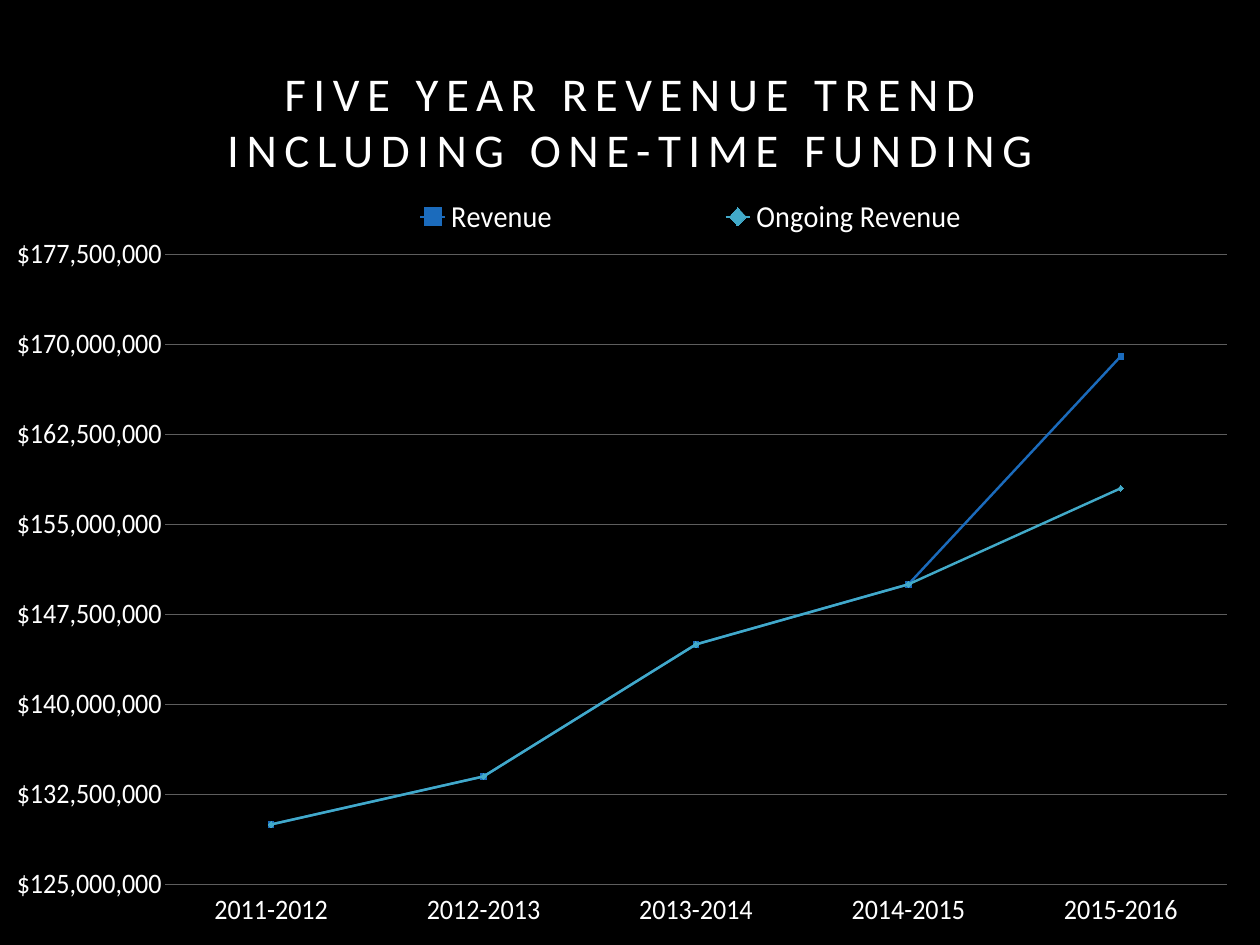
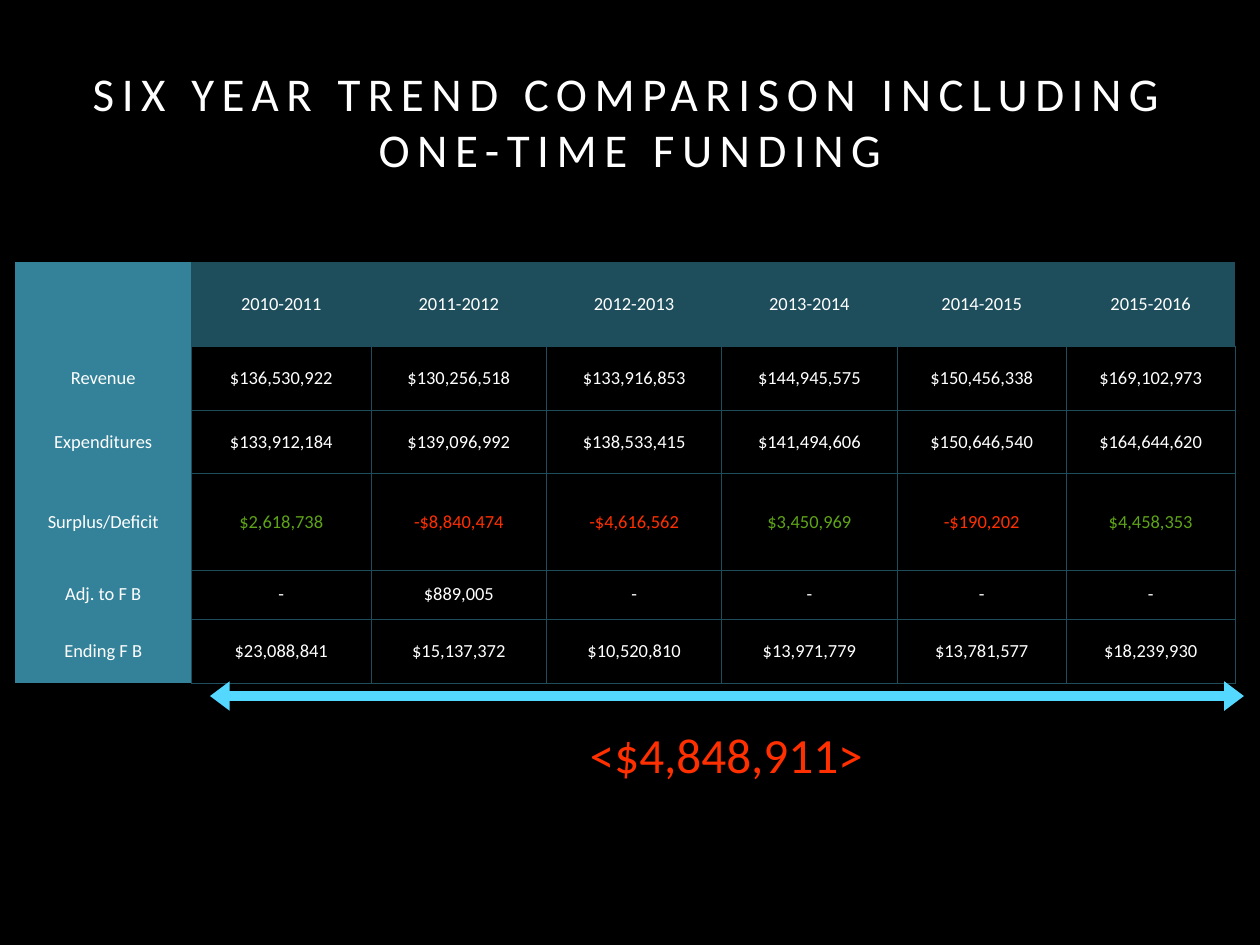
"""Build two slides on revenue trends: a line chart and a comparison table."""
from collections import namedtuple
from lxml.etree import Element, SubElement
from pptx import Presentation
from pptx.chart.data import CategoryChartData
from pptx.dml.color import RGBColor
from pptx.enum.chart import (XL_CHART_TYPE, XL_LEGEND_POSITION, XL_MARKER_STYLE,
                             XL_TICK_LABEL_POSITION, XL_TICK_MARK)
from pptx.enum.shapes import MSO_CONNECTOR
from pptx.enum.text import MSO_ANCHOR, MSO_AUTO_SIZE, PP_ALIGN
from pptx.oxml.ns import qn
from pptx.util import Cm, Pt

Theme = namedtuple("Theme", "face back text dark teal blue aqua sky grid gain loss "
                            "title cell axis key total pad")
theme = Theme(
    face="Calibri",
    **{name: RGBColor.from_string(code) for name, code in dict(
        back="000000", text="FFFFFF", dark="1E4E5C", teal="338299", blue="1B6BBC",
        aqua="42AAC9", sky="55D8FF", grid="5E5E5E", gain="5EA318", loss="FF2F00").items()},
    title=Pt(38.2), cell=Pt(15), axis=Pt(24), key=Pt(26), total=Pt(40), pad=Cm(0.15))


def style(font, size, color=theme.text):
    font.name, font.size, font.bold = theme.face, size, False
    font.color.rgb = color


def place(node, index, box):
    for old in node.findall(qn("c:layout")):
        node.remove(old)
    layout = Element(qn("c:layout"))
    node.insert(index, layout)
    manual = SubElement(layout, qn("c:manualLayout"))
    if node.tag == qn("c:plotArea"):
        SubElement(manual, qn("c:layoutTarget"), val="inner")
    for name in ("xMode", "yMode"):
        SubElement(manual, qn("c:" + name), val="edge")
    for name, value in zip("xywh", box):
        SubElement(manual, qn("c:" + name), val=str(value))


deck = Presentation()
deck.slide_width, deck.slide_height = Cm(36.12), Cm(27.1)
fill = deck.slide_master.background.fill
fill.solid()
fill.fore_color.rgb = theme.back

titles = [["FIVE YEAR REVENUE TREND", "INCLUDING ONE-TIME FUNDING"],
          ["SIX YEAR TREND COMPARISON INCLUDING ONE-TIME FUNDING"]]
slides = []
for lines in titles:
    slide = deck.slides.add_slide(deck.slide_layouts[5])
    title = slide.shapes.title
    title.left, title.top, title.width, title.height = Cm(1.83), Cm(1.7), Cm(32.46), Cm(3.96)
    frame = title.text_frame
    frame.text = "\n".join(lines)
    frame.word_wrap, frame.auto_size = True, MSO_AUTO_SIZE.NONE
    frame.vertical_anchor = MSO_ANCHOR.TOP
    frame.margin_left = frame.margin_right = theme.pad
    frame.margin_top = frame.margin_bottom = theme.pad
    for para in frame.paragraphs:
        para.alignment = PP_ALIGN.CENTER
        style(para.font, theme.title)
        for run in para.runs:
            run.font._element.set("spc", "614")
    slides.append(slide)
trend, compare = slides

years = ["2010-2011", "2011-2012", "2012-2013", "2013-2014", "2014-2015", "2015-2016"]
past = [130_000_000, 134_000_000, 145_000_000, 150_000_000]
data = CategoryChartData()
data.categories = years[1:]
data.add_series("Revenue", past + [169_000_000])
data.add_series("Ongoing Revenue", past + [158_000_000])
chart = trend.shapes.add_chart(XL_CHART_TYPE.LINE_MARKERS, Cm(0.48), Cm(5.41),
                               Cm(34.85), Cm(21.18), data).chart
chart.has_title = False
style(chart.font, Pt(10))
plot = chart.plots[0]
plot.vary_by_categories = False
looks = [(theme.blue, XL_MARKER_STYLE.SQUARE), (theme.aqua, XL_MARKER_STYLE.DIAMOND)]
for row, (color, mark) in zip(plot.series, looks):
    row.smooth = False
    row.format.line.color.rgb = color
    row.format.line.width = Pt(2.25)
    row.marker.style, row.marker.size = mark, 5
    row.marker.format.fill.solid()
    row.marker.format.fill.fore_color.rgb = color
    row.marker.format.line.color.rgb = color

for axis in (chart.category_axis, chart.value_axis):
    axis.major_tick_mark = axis.minor_tick_mark = XL_TICK_MARK.NONE
    axis.format.line.fill.background()
    style(axis.tick_labels.font, theme.axis)
chart.category_axis.tick_label_position = XL_TICK_LABEL_POSITION.LOW
axis = chart.value_axis
axis.minimum_scale, axis.maximum_scale, axis.major_unit = 125_000_000, 177_500_000, 7_500_000
axis.tick_labels.number_format = '"$"#,##0'
axis.tick_labels.number_format_is_linked = False
axis.major_gridlines.format.line.color.rgb = theme.grid
axis.major_gridlines.format.line.width = Pt(1)

chart.has_legend = True
legend = chart.legend
legend.position = XL_LEGEND_POSITION.TOP
legend.include_in_layout = True
style(legend.font, theme.key)
place(legend._element, 1, (0.09, 0.01, 0.81, 0.06))
place(chart._chartSpace.find(".//" + qn("c:plotArea")), 0, (0.005, 0.093, 0.99, 0.894))

rows = [
    [""] + years,
    ["Revenue", "$136,530,922", "$130,256,518", "$133,916,853",
     "$144,945,575", "$150,456,338", "$169,102,973"],
    ["Expenditures", "$133,912,184", "$139,096,992", "$138,533,415",
     "$141,494,606", "$150,646,540", "$164,644,620"],
    ["Surplus/Deficit", "$2,618,738", "-$8,840,474", "-$4,616,562",
     "$3,450,969", "-$190,202", "$4,458,353"],
    ["Adj. to F B", "-", "$889,005", "-", "-", "-", "-"],
    ["Ending F B", "$23,088,841", "$15,137,372", "$10,520,810",
     "$13,971,779", "$13,781,577", "$18,239,930"],
]
wide = [5.06, 5.15, 5.03, 5.02, 5.03, 4.85, 4.84]
high = [2.42, 1.83, 1.83, 2.76, 1.41, 1.83]
table = compare.shapes.add_table(len(rows), len(wide), Cm(0.43), Cm(7.51),
                                 Cm(sum(wide)), Cm(sum(high))).table
table.first_row = table.horz_banding = False
table._tbl.tblPr.find(qn("a:tableStyleId")).text = "{2D5ABB26-0587-4C30-8999-92F81FD0307C}"
for col, width in zip(table.columns, wide):
    col.width = Cm(width)
for row, height in zip(table.rows, high):
    row.height = Cm(height)
for r, row in enumerate(rows):
    for c, text in enumerate(row):
        cell = table.cell(r, c)
        cell.text = text
        cell.vertical_anchor = MSO_ANCHOR.MIDDLE
        cell.margin_left = cell.margin_right = theme.pad
        cell.margin_top = cell.margin_bottom = theme.pad
        color = theme.text
        if row[0] == "Surplus/Deficit" and c:
            color = theme.loss if text.startswith("-") else theme.gain
        para = cell.text_frame.paragraphs[0]
        para.alignment = PP_ALIGN.CENTER
        style(para.font, theme.cell, color)
        if r and c:
            for side in ("lnL", "lnR", "lnT", "lnB"):
                edge = SubElement(cell._tc.get_or_add_tcPr(), qn("a:" + side), w=str(Pt(1)))
                solid = SubElement(edge, qn("a:solidFill"))
                SubElement(solid, qn("a:srgbClr"), val=str(theme.dark))
            cell.fill.background()
        else:
            cell.fill.solid()
            cell.fill.fore_color.rgb = theme.dark if c else theme.teal

arrow = compare.shapes.add_connector(MSO_CONNECTOR.STRAIGHT, Cm(6.02), Cm(19.96),
                                     Cm(35.66), Cm(19.96))
arrow.line.color.rgb = theme.sky
arrow.line.width = Pt(8)
for end in ("headEnd", "tailEnd"):
    SubElement(arrow.line._get_or_add_ln(), qn("a:" + end), type="triangle", w="med", len="sm")
SubElement(arrow._element.spPr, qn("a:effectLst"))

total = compare.shapes.add_textbox(Cm(16.42), Cm(20.5), Cm(8.81), Cm(2.24))
frame = total.text_frame
frame.text = "<$4,848,911>"
frame.word_wrap, frame.auto_size = False, MSO_AUTO_SIZE.SHAPE_TO_FIT_TEXT
frame.vertical_anchor = MSO_ANCHOR.MIDDLE
frame.margin_left = frame.margin_right = theme.pad
frame.margin_top = frame.margin_bottom = theme.pad
para = frame.paragraphs[0]
para.alignment = PP_ALIGN.CENTER
style(para.font, theme.total, theme.loss)

deck.save("out.pptx")
